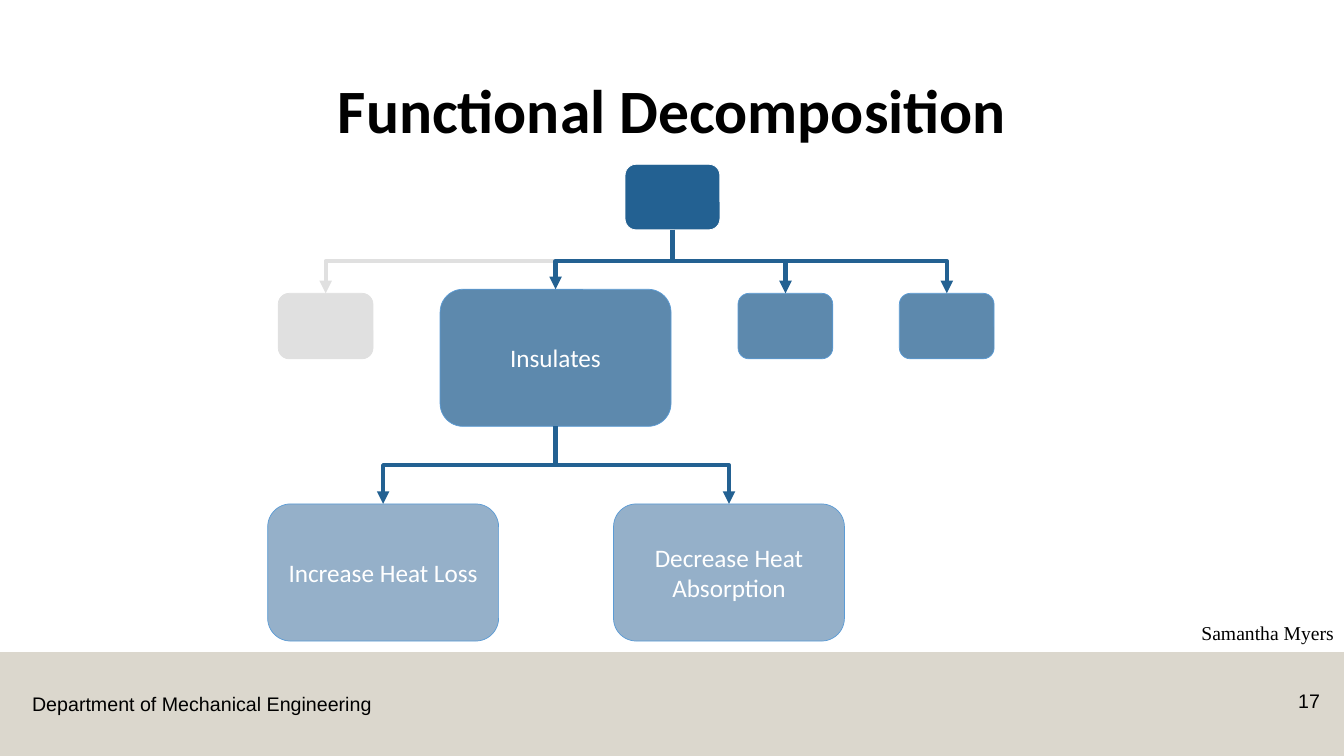
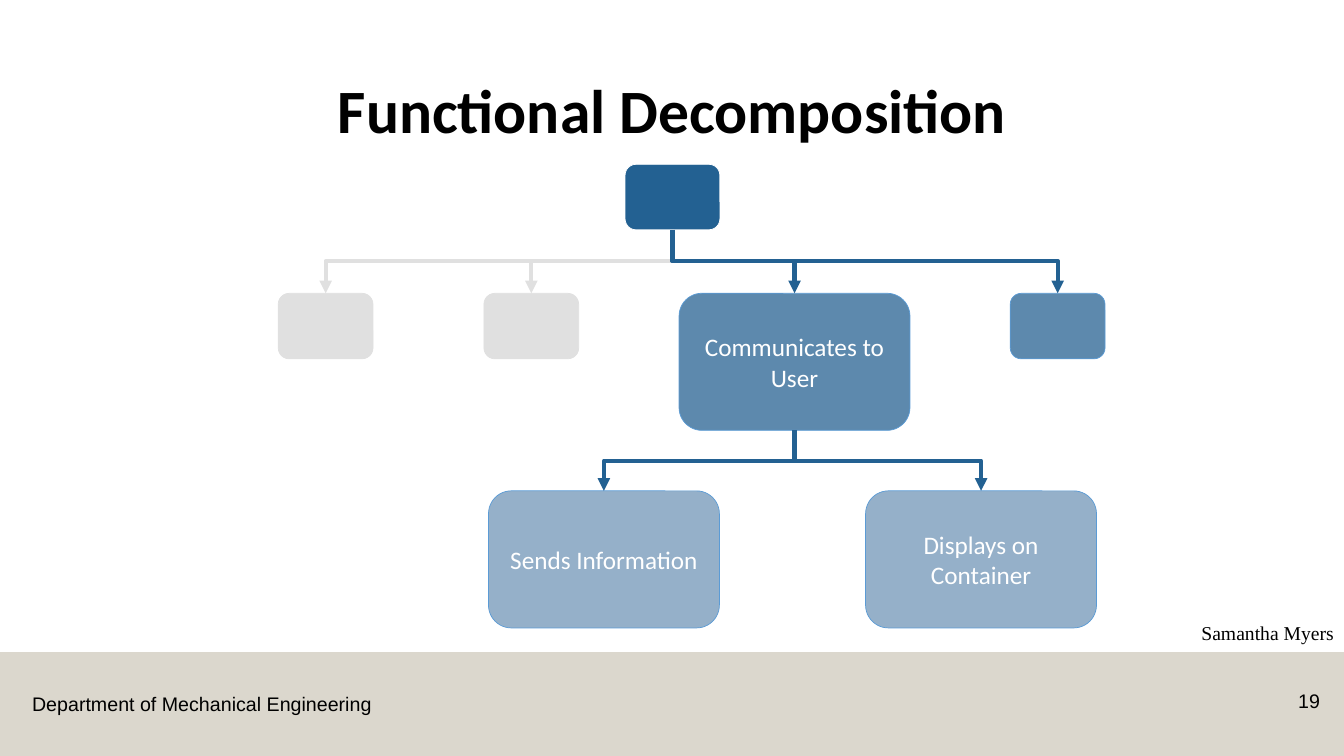
from lxml import etree
from pptx import Presentation
from pptx.dml.color import RGBColor
from pptx.enum.shapes import MSO_CONNECTOR, MSO_SHAPE
from pptx.enum.text import MSO_ANCHOR, MSO_AUTO_SIZE, PP_ALIGN
from pptx.oxml.ns import qn
from pptx.util import Inches, Pt

ELBOW = MSO_CONNECTOR.ELBOW
RECT, ROUND_RECT = MSO_SHAPE.RECTANGLE, MSO_SHAPE.ROUNDED_RECTANGLE
LEFT, CENTER, RIGHT = PP_ALIGN.LEFT, PP_ALIGN.CENTER, PP_ALIGN.RIGHT
MIDDLE, NO_FIT = MSO_ANCHOR.MIDDLE, MSO_AUTO_SIZE.NONE
TOP_SITE, BOTTOM_SITE = 0, 2

BLACK, WHITE = "000000", "FFFFFF"
NAVY, GRAY, BAND = "236192", "E0E0E0", "DBD7CD"
# Fill and outline of each kind of box
STYLES = {
    "root": (NAVY, WHITE),
    "function": ("5D89AD", "5B9BD5"),
    "detail": ("95B0C9", "5B9BD5"),
    "done": (GRAY, GRAY),
}
SMALL, LARGE = (0.94, 0.65), (2.29, 1.36)
ROOT_X, ROOT_TOP, SMALL_TOP = 6.67, 1.63, 2.91


def rgb(color):
    return RGBColor.from_string(color)


class Deck:
    def __init__(self):
        self.prs = Presentation()
        self.prs.slide_width, self.prs.slide_height = Inches(13.33), Inches(7.5)
        self.s = None

    def add_text(self, tf, text, size, font="Calibri", color=BLACK, align=LEFT, bold=False):
        p = tf.paragraphs[0]
        p.alignment = align
        r = p.add_run()
        r.text = text
        r.font.size, r.font.name, r.font.bold = Pt(size), font, bold
        r.font.color.rgb = rgb(color)
        return p

    def label(self, x, y, w, h, text, font="Arial", align=LEFT):
        tf = self.s.shapes.add_textbox(Inches(x), Inches(y), Inches(w), Inches(h)).text_frame
        tf.word_wrap = True
        return self.add_text(tf, text, 14, font, align=align)

    def shape(self, kind, x, y, w, h, fill, line=None):
        sp = self.s.shapes.add_shape(kind, Inches(x), Inches(y), Inches(w), Inches(h))
        sp.shadow.inherit = False
        sp.fill.solid()
        sp.fill.fore_color.rgb = rgb(fill)
        if line:
            sp.line.color.rgb = rgb(line)
            sp.line.width = Pt(0.5)
        else:
            sp.line.fill.background()
        return sp

    def slide(self, title, number, author):
        self.s = self.prs.slides.add_slide(self.prs.slide_layouts[5])
        self.shape(RECT, 0, 6.47, 13.33, 1.03, BAND)
        self.label(0.22, 6.82, 3.8, 0.34, "Department of Mechanical Engineering")
        self.label(12.42, 6.79, 0.77, 0.4, str(number), align=RIGHT)
        self.label(11.33, 6.14, 2, 0.34, author, "Times New Roman", RIGHT).line_spacing = 0.9
        sp = self.s.shapes.title
        sp.left, sp.top, sp.width, sp.height = Inches(0.92), Inches(0.4), Inches(11.5), Inches(1.45)
        tf = sp.text_frame
        tf.auto_size, tf.vertical_anchor = NO_FIT, MIDDLE
        self.add_text(tf, title, 44, align=CENTER, bold=True).line_spacing = 0.9

    def box(self, center, top, style, text=""):
        """Box centred on a column; large when it carries text."""
        w, h = LARGE if text else SMALL
        sp = self.shape(ROUND_RECT, center - w / 2, top, w, h, *STYLES[style])
        if text:
            tf = sp.text_frame
            tf.word_wrap, tf.vertical_anchor = True, MIDDLE
            tf.margin_left = tf.margin_right = Inches(0.03)
            self.add_text(tf, text, 18, color=WHITE, align=CENTER)
        return sp

    def arrow(self, parent, child, drop, color=NAVY):
        """Elbow from parent's bottom to child's top, turning after drop."""
        x1, y1 = parent.left + parent.width // 2, parent.top + parent.height
        x2, y2 = child.left + child.width // 2, child.top
        run, rise = abs(x2 - x1), y2 - y1
        left, top = (x1 + x2 - rise) // 2, (y1 + y2 - run) // 2
        c = self.s.shapes.add_connector(ELBOW, x1, y1, x2, y2)
        c.begin_connect(parent, BOTTOM_SITE)
        c.end_connect(child, TOP_SITE)
        # Connecting moves the ends, so the turned frame is set afterwards
        c.left, c.top, c.width, c.height = left, top, rise, run
        c.line.color.rgb = rgb(color)
        c.line.width = Pt(3)
        spPr = c._element.spPr
        xfrm = spPr.find(qn("a:xfrm"))
        for flip in ("flipH", "flipV"):
            xfrm.attrib.pop(flip, None)
        xfrm.set("rot", str((270 if x2 > x1 else 90) * 60000))
        if x2 > x1:
            xfrm.set("flipH", "1")
        guides = spPr.find(qn("a:prstGeom")).find(qn("a:avLst"))
        turn = round(100000 * Inches(drop) / rise)
        etree.SubElement(guides, qn("a:gd"), name="adj1", fmla=f"val {turn}")
        etree.SubElement(spPr.find(qn("a:ln")), qn("a:tailEnd"), type="triangle")
        etree.SubElement(spPr, qn("a:effectLst"))

    def tree(self, done, todo, main, details):
        """Small boxes at the done and todo columns; main and details are large."""
        root = self.box(ROOT_X, ROOT_TOP, "root")
        done_boxes = [self.box(x, SMALL_TOP, "done") for x in done]
        todo_boxes = [self.box(x, SMALL_TOP, "function") for x in todo]
        x, top, text = main
        main_box = self.box(x, top, "function", text)
        detail_top, columns = details
        detail_boxes = [self.box(x, detail_top, "detail", text) for x, text in columns]
        for child in done_boxes:
            self.arrow(root, child, 0.31, GRAY)
        for child in [main_box] + todo_boxes:
            self.arrow(root, child, 0.31)
        for child in detail_boxes:
            self.arrow(main_box, child, (detail_top - top - LARGE[1]) / 2)


def main():
    deck = Deck()
    title, author = "Functional Decomposition", "Samantha Myers"

    deck.slide(title, 17, author)
    deck.tree(
        done=[3.23],
        todo=[7.79, 9.39],
        main=(5.51, 2.87, "Insulates"),
        details=(5, [(3.8, "Increase Heat Loss"), (7.23, "Decrease Heat Absorption")]),
    )

    deck.slide(title, 19, author)
    deck.tree(
        done=[3.23, 5.27],
        todo=[10.49],
        main=(7.88, SMALL_TOP, "Communicates to User"),
        details=(4.87, [(5.99, "Sends Information"), (9.73, "Displays on Container")]),
    )
    deck.prs.save("out.pptx")


if __name__ == "__main__":
    main()
